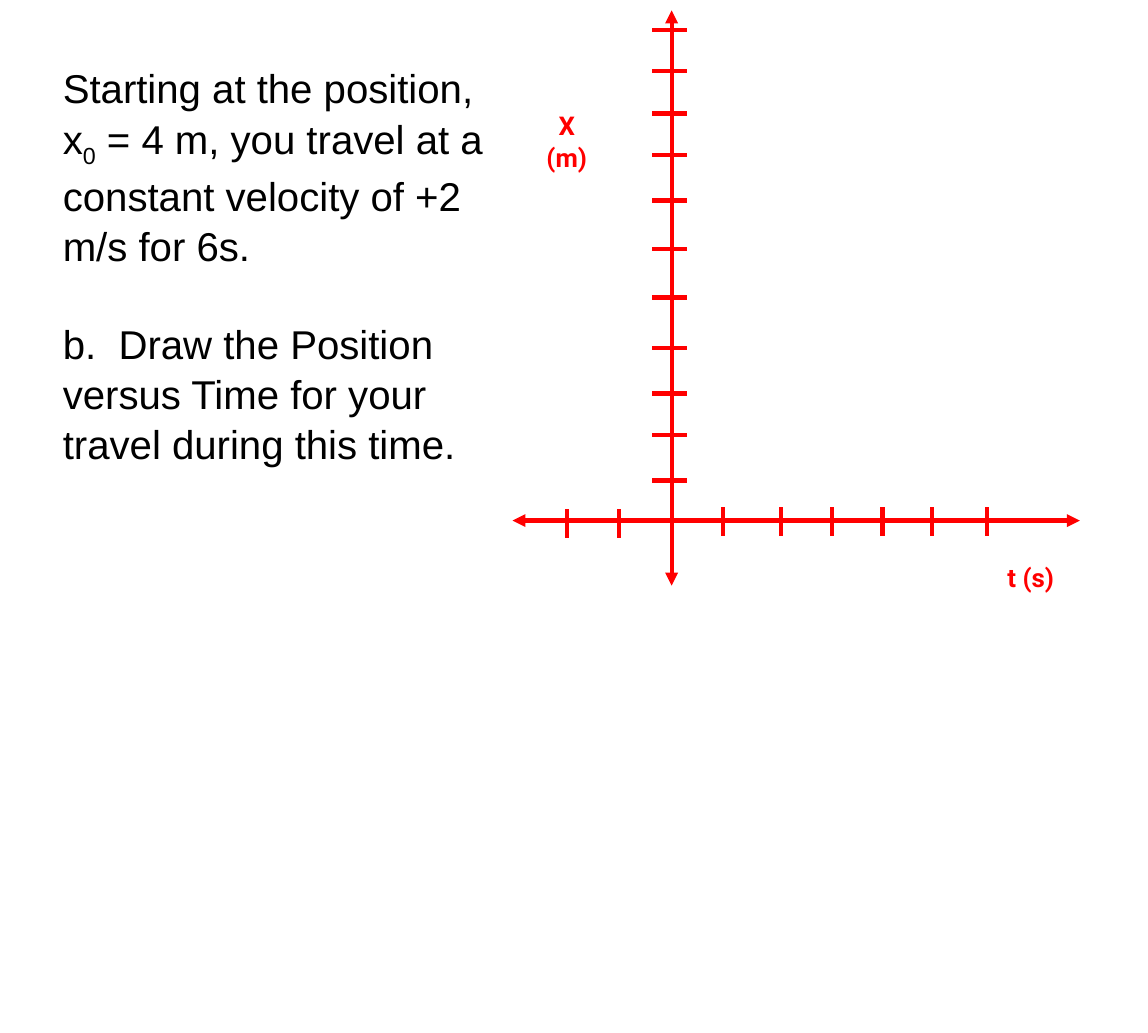
from lxml import etree
from pptx import Presentation
from pptx.dml.color import RGBColor
from pptx.enum.shapes import MSO_CONNECTOR
from pptx.enum.text import PP_ALIGN
from pptx.oxml.ns import qn
from pptx.util import Pt

STRAIGHT = MSO_CONNECTOR.STRAIGHT
LEFT, CENTER = PP_ALIGN.LEFT, PP_ALIGN.CENTER
BLACK = RGBColor(0x00, 0x00, 0x00)
RED = RGBColor(0xFF, 0x00, 0x00)

PX = 9144
SLIDE_SIZE = (1111, 1000)
LINE_SPACING = 1.04
PARAGRAPH_GAP = Pt(33.5)
SUBSCRIPT = "-25000"

PROBLEM_FORMAT = {"name": "Arial", "size": Pt(28), "bold": False}
LABEL_FORMAT = {"name": "Roboto", "size": Pt(18), "bold": True}

PROBLEM = [
    [("Starting at the position, x", False), ("0", True),
     (" = 4 m, you travel at a constant velocity of +2 m/s for 6s.", False)],
    [("b.  Draw the Position versus Time for your travel during this time.", False)],
]
POSITION_LABEL = [[("X", False)], [("(m)", False)]]
TIME_LABEL = [[("t (s)", False)]]

TEXTS = [
    (PROBLEM, (51, 55, 433, 387), PROBLEM_FORMAT, BLACK, LEFT, PARAGRAPH_GAP),
    (POSITION_LABEL, (475, 100, 147, 71), LABEL_FORMAT, RED, CENTER, 0),
    (TIME_LABEL, (931, 538, 133, 40), LABEL_FORMAT, RED, CENTER, 0),
]

AXES = [(650, 10, 650, 567), (496, 504, 1045, 504)]
POSITION_TICKS = [29, 69, 110, 150, 194, 241, 288, 337, 381, 421, 465]
POSITION_TICK_ENDS = (631, 665)
TIME_TICKS = [
    ([549, 599], (493, 521)),
    ([700, 756, 805, 854, 902, 955], (491, 519)),
]


def add_text(slide, paragraphs, box, font_format, color, alignment, gap):
    shape = slide.shapes.add_textbox(*(value * PX for value in box))
    frame = shape.text_frame
    frame.word_wrap = True
    for index, runs in enumerate(paragraphs):
        paragraph = frame.add_paragraph() if index else frame.paragraphs[0]
        paragraph.alignment = alignment
        paragraph.line_spacing = LINE_SPACING
        if index:
            paragraph.space_before = gap
        for text, lowered in runs:
            run = paragraph.add_run()
            run.text = text
            for name, value in font_format.items():
                setattr(run.font, name, value)
            run.font.color.rgb = color
            if lowered:
                run.font._element.set("baseline", SUBSCRIPT)


def add_line(slide, ends, arrows=False):
    connector = slide.shapes.add_connector(STRAIGHT, *(value * PX for value in ends))
    connector.line.color.rgb = RED
    connector.line.width = Pt(3)
    if arrows:
        line = connector.line._get_or_add_ln()
        for tag in ("a:headEnd", "a:tailEnd"):
            etree.SubElement(line, qn(tag), type="triangle")
    etree.SubElement(connector._element.spPr, qn("a:effectLst"))


def main():
    presentation = Presentation()
    presentation.slide_width, presentation.slide_height = (
        value * PX for value in SLIDE_SIZE)
    slide = presentation.slides.add_slide(presentation.slide_layouts[6])

    for text in TEXTS:
        add_text(slide, *text)
    for axis in AXES:
        add_line(slide, axis, arrows=True)

    left, right = POSITION_TICK_ENDS
    for y in POSITION_TICKS:
        add_line(slide, (left, y, right, y))
    for ticks, (top, bottom) in TIME_TICKS:
        for x in ticks:
            add_line(slide, (x, top, x, bottom))

    presentation.save("out.pptx")


if __name__ == "__main__":
    main()
